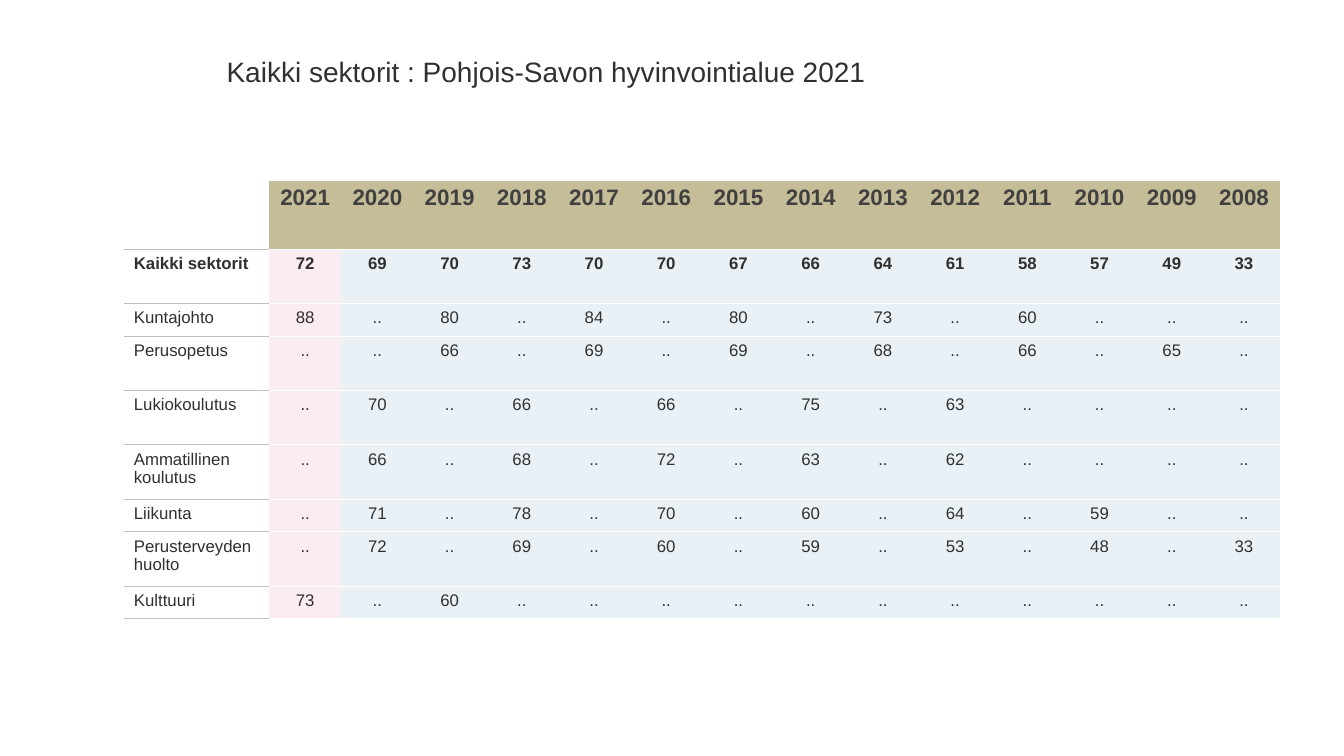
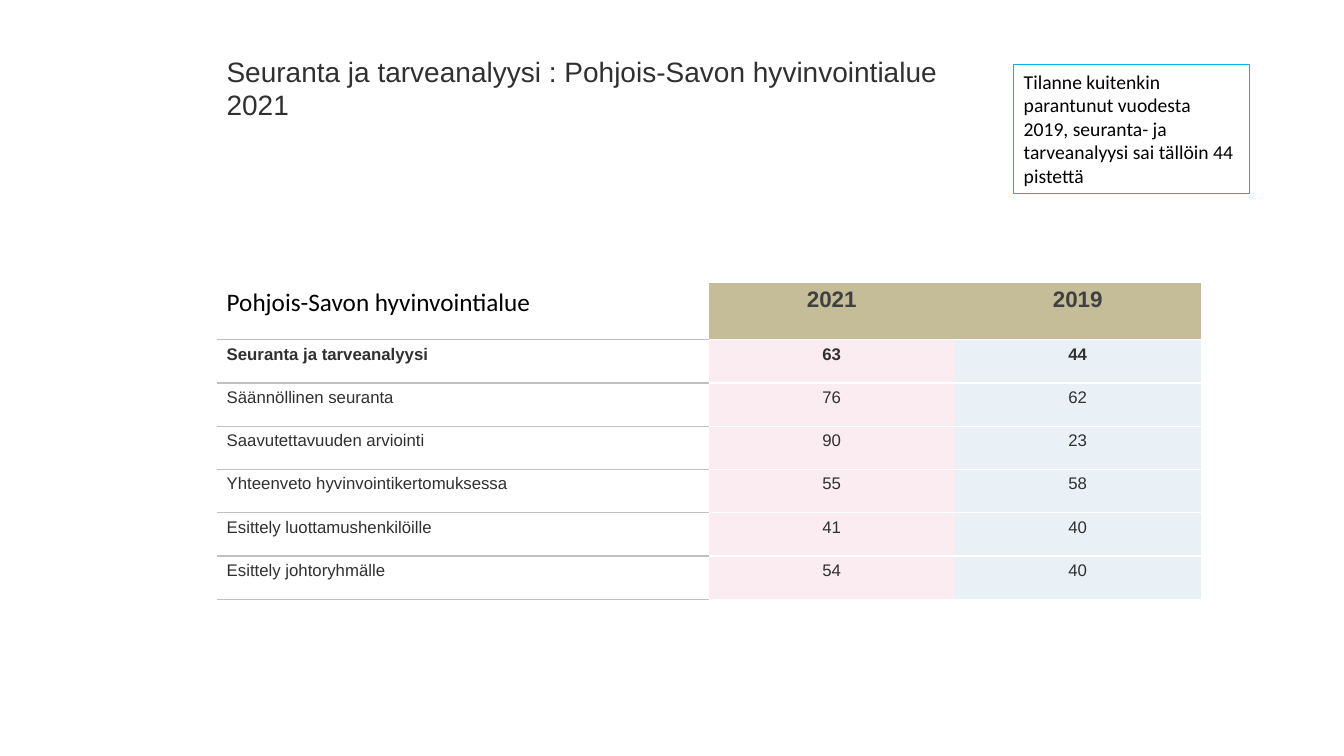
from lxml import etree
from pptx import Presentation
from pptx.dml.color import RGBColor
from pptx.enum import shapes, text
from pptx.oxml import ns
from pptx.util import Cm, Pt

WHITE, BLACK, INK = "FFFFFF", "000000", "303030"
HEADER_FILL, HEADER_INK = "C4BD97", "404040"
LATEST_FILL, EARLIER_FILL = "FBECF1", "E9F1F7"
RULE, NOTE_LINE = "C0C0C0", "00B0F0"
TITLE_BOX = (5.46, 1.24, 20.12, 1.42)

SECTOR_YEARS = [str(year) for year in range(2021, 2007, -1)]
TALL, LOW = 1.37, 0.82
SECTORS = [
    ("Kaikki sektorit", "72 69 70 73 70 70 67 66 64 61 58 57 49 33", TALL),
    ("Kuntajohto", "88 .. 80 .. 84 .. 80 .. 73 .. 60 .. .. ..", LOW),
    ("Perusopetus", ".. .. 66 .. 69 .. 69 .. 68 .. 66 .. 65 ..", TALL),
    ("Lukiokoulutus", ".. 70 .. 66 .. 66 .. 75 .. 63 .. .. .. ..", TALL),
    ("Ammatillinen koulutus", ".. 66 .. 68 .. 72 .. 63 .. 62 .. .. .. ..", TALL),
    ("Liikunta", ".. 71 .. 78 .. 70 .. 60 .. 64 .. 59 .. ..", LOW),
    ("Perusterveydenhuolto", ".. 72 .. 69 .. 60 .. 59 .. 53 .. 48 .. 33", TALL),
    ("Kulttuuri", "73 .. 60 .. .. .. .. .. .. .. .. .. .. ..", LOW),
]
ANALYSIS_ROW = 1.09
ANALYSIS = [
    ("Seuranta ja tarveanalyysi", "63 44", ANALYSIS_ROW),
    ("Säännöllinen seuranta", "76 62", ANALYSIS_ROW),
    ("Saavutettavuuden arviointi", "90 23", ANALYSIS_ROW),
    ("Yhteenveto hyvinvointikertomuksessa", "55 58", ANALYSIS_ROW),
    ("Esittely luottamushenkilöille", "41 40", ANALYSIS_ROW),
    ("Esittely johtoryhmälle", "54 40", ANALYSIS_ROW),
]


def colour(value):
    return RGBColor.from_string(value)


def write(frame, content, size, ink=INK, font="Arial", bold=False, align=text.PP_ALIGN.LEFT):
    paragraph = frame.paragraphs[0]
    paragraph.alignment = align
    run = paragraph.add_run()
    run.text = content
    run.font.name = font
    run.font.size = Pt(size)
    run.font.bold = bold
    run.font.color.rgb = colour(ink)


def add_title(slide, content):
    box = slide.shapes.add_textbox(*map(Cm, TITLE_BOX))
    box.text_frame.word_wrap = True
    write(box.text_frame, content, 20)


def add_note(slide, content, left, top, width, height):
    note = slide.shapes.add_shape(
        shapes.MSO_SHAPE.RECTANGLE, Cm(left), Cm(top), Cm(width), Cm(height))
    note.shadow.inherit = False
    note.fill.background()
    note.line.color.rgb = colour(NOTE_LINE)
    note.line.width = Pt(0.75)
    note.text_frame.word_wrap = True
    note.text_frame.vertical_anchor = text.MSO_ANCHOR.TOP
    write(note.text_frame, content, 14, BLACK, "Calibri")


def set_borders(cell, top, bottom):
    """Rule a cell above and below, with open sides."""
    properties = cell._tc.get_or_add_tcPr()
    sides = [("lnL", None), ("lnR", None), ("lnT", top), ("lnB", bottom)]
    for position, (side, ink) in enumerate(sides):
        line = etree.Element(ns.qn("a:" + side), w=str(Pt(1)))
        if ink:
            fill = etree.SubElement(line, ns.qn("a:solidFill"))
            etree.SubElement(fill, ns.qn("a:srgbClr"), val=ink)
        else:
            etree.SubElement(line, ns.qn("a:noFill"))
        properties.insert(position, line)


def style_cell(cell, row, column):
    if column == 0:
        fill = WHITE
    elif row == 0:
        fill = HEADER_FILL
    else:
        fill = LATEST_FILL if column == 1 else EARLIER_FILL
    cell.fill.solid()
    cell.fill.fore_color.rgb = colour(fill)
    rule = RULE if column == 0 else WHITE
    set_borders(cell, WHITE if row == 0 else rule, rule)


def add_score_table(slide, left, top, label_width, year_width, header_height,
                    years, records, corner=""):
    widths = [label_width] + [year_width] * len(years)
    heights = [header_height] + [height for _, _, height in records]
    rows = [[corner, *years]] + [[label, *scores.split()] for label, scores, _ in records]
    table = slide.shapes.add_table(
        len(rows), len(widths), Cm(left), Cm(top), Cm(sum(widths)), Cm(sum(heights))).table
    table.first_row = table.horz_banding = False
    for column, width in zip(table.columns, widths):
        column.width = Cm(width)
    for row, (height, values) in enumerate(zip(heights, rows)):
        table.rows[row].height = Cm(height)
        for column, value in enumerate(values):
            cell = table.cell(row, column)
            style_cell(cell, row, column)
            align = text.PP_ALIGN.CENTER if column else text.PP_ALIGN.LEFT
            if row:
                write(cell.text_frame, value, 12, bold=row == 1, align=align)
            elif column:
                write(cell.text_frame, value, 16, HEADER_INK, bold=True, align=align)
            elif value:
                write(cell.text_frame, value, 18, BLACK, "Calibri")


def add_slide(presentation, title):
    slide = presentation.slides.add_slide(presentation.slide_layouts[6])
    add_title(slide, title)
    return slide


def main():
    presentation = Presentation()
    presentation.slide_width, presentation.slide_height = Cm(33.87), Cm(19.05)

    slide = add_slide(presentation, "Kaikki sektorit : Pohjois-Savon hyvinvointialue 2021")
    add_score_table(slide, 3.12, 4.55, 3.66, 1.82, 1.73, SECTOR_YEARS, SECTORS)

    slide = add_slide(
        presentation, "Seuranta ja tarveanalyysi : Pohjois-Savon hyvinvointialue 2021")
    add_score_table(slide, 5.46, 7.11, 12.4, 6.2, 1.45, ["2021", "2019"], ANALYSIS,
                    "Pohjois-Savon hyvinvointialue")
    add_note(slide, "Tilanne kuitenkin parantunut vuodesta 2019, seuranta- ja "
             "tarveanalyysi sai tällöin 44 pistettä", 25.55, 1.63, 5.95, 3.25)

    presentation.save("out.pptx")


if __name__ == "__main__":
    main()
